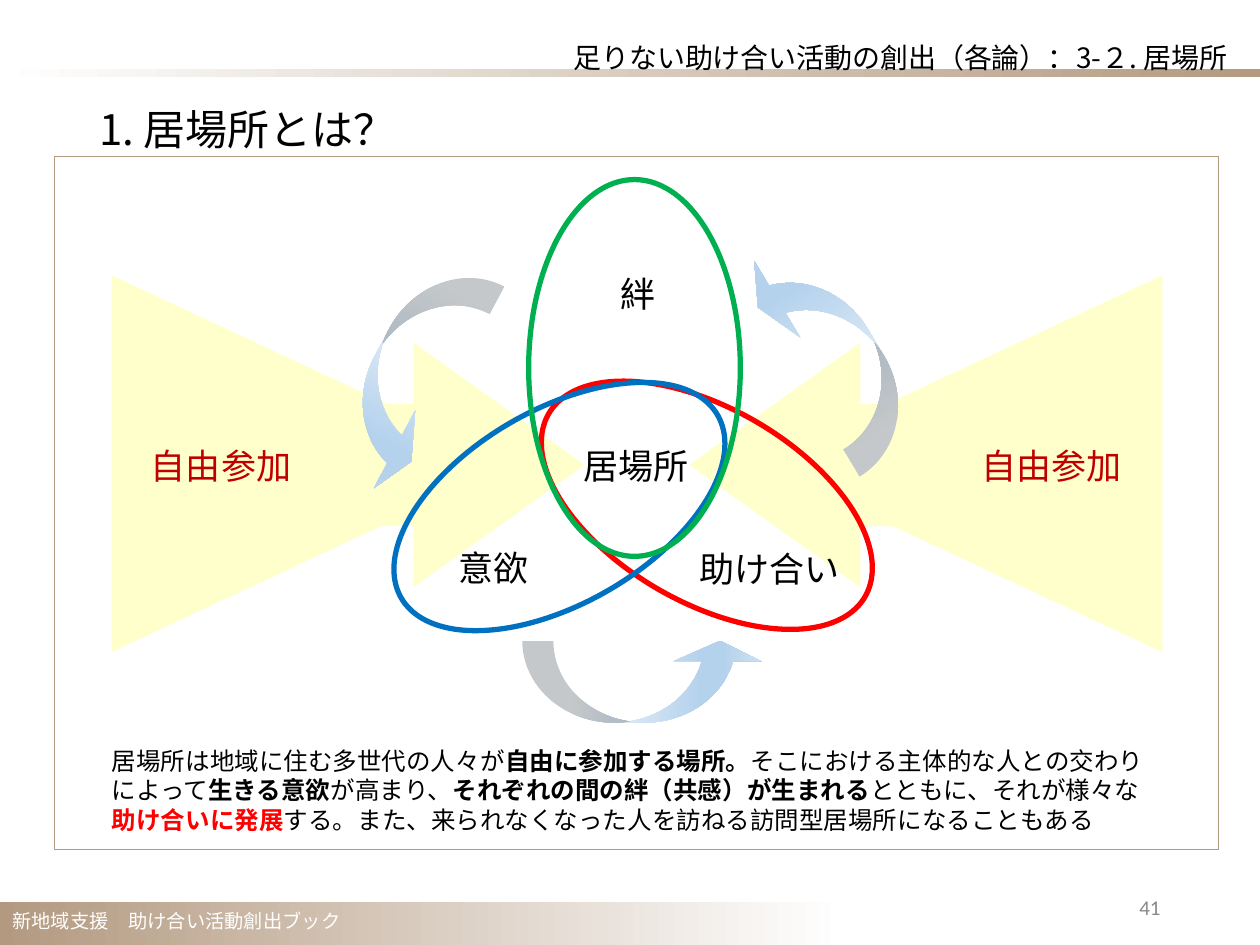
from typing import NamedTuple
from lxml.etree import SubElement
from pptx import Presentation
from pptx.dml.color import RGBColor
from pptx.enum.shapes import MSO_SHAPE as Kind
from pptx.enum.text import MSO_ANCHOR as Anchor, MSO_AUTO_SIZE as Auto, PP_ALIGN as Align
from pptx.oxml.ns import qn
from pptx.util import Inches, Pt

COLS, ROWS = 100, 75
WIDE, HIGH = Inches(10), Inches(7.5)
AXIS = 50.55  # column about which the two sides mirror
SANS = "Noto Sans CJK JP"
BLACK, WHITE, RED, DARK = "000000", "FFFFFF", "FF0000", "C00000"
TAN, CREAM, GREY = "B39980", "FFFFCC", "898989"


class Box(NamedTuple):
    col: float
    row: float
    cols: float
    rows: float

    def mirror(self):
        return self._replace(col=2 * AXIS - self.col - self.cols)

    def emu(self):
        return [round(n) for n in (self.col * WIDE / COLS, self.row * HIGH / ROWS,
                                   self.cols * WIDE / COLS, self.rows * HIGH / ROWS)]


class Ring(NamedTuple):
    box: Box
    turn: float
    hue: str


class Label(NamedTuple):
    text: str
    box: Box
    hue: str = BLACK


class Swirl(NamedTuple):
    box: Box
    turn: float


def tint(hue: str) -> RGBColor:
    return RGBColor.from_string(hue)


def blend(shape, stops, angle: int) -> None:
    """Fill with a gradient of (percent, hue) stops."""
    shape.fill.background()
    prop = shape.element.spPr
    old = prop.find(qn("a:noFill"))
    grad = SubElement(prop, qn("a:gradFill"), rotWithShape="1")
    prop.replace(old, grad)
    items = SubElement(grad, qn("a:gsLst"))
    for share, hue in stops:
        stop = SubElement(items, qn("a:gs"), pos=str(share * 1000))
        SubElement(stop, qn("a:srgbClr"), val=hue)
    SubElement(grad, qn("a:lin"), ang=str(angle * 60000), scaled="0")


def draw(slide, kind, box: Box, fill=None, line=None, weight=1.0, turn=0.0,
         adjust=(), stops=None, angle=0):
    shape = slide.shapes.add_shape(kind, *box.emu())
    shape.shadow.inherit = False
    shape.rotation = turn
    for spot, value in enumerate(adjust):
        shape.adjustments[spot] = value
    if stops:
        blend(shape, stops, angle)
    elif fill:
        shape.fill.solid()
        shape.fill.fore_color.rgb = tint(fill)
    else:
        shape.fill.background()
    if line:
        shape.line.color.rgb = tint(line)
        shape.line.width = Pt(weight)
    else:
        shape.line.fill.background()
    return shape


def write(slide, box: Box, text, size=20, hue=BLACK, font=SANS, align=Align.LEFT,
          anchor=Anchor.TOP, wrap=True, fit=Auto.SHAPE_TO_FIT_TEXT, space=None, holder=None):
    """Write a string, or a list of (text, bold, hue) runs."""
    if holder is None:
        shape = slide.shapes.add_textbox(*box.emu())
    else:
        shape = holder
        shape.left, shape.top, shape.width, shape.height = box.emu()
        shape.element.getparent().append(shape.element)  # bring to front
    frame = shape.text_frame
    frame.word_wrap, frame.auto_size, frame.vertical_anchor = wrap, fit, anchor
    para = frame.paragraphs[0]
    if holder is not None:
        prop = para._p.get_or_add_pPr()
        prop.set("marL", "0")
        prop.set("indent", "0")
        SubElement(prop, qn("a:buNone"))
        para.space_before = Pt(0)
    para.alignment = align
    if space:
        para.line_spacing = space
    for words, bold, shade in [(text, False, hue)] if isinstance(text, str) else text:
        run = para.add_run()
        run.text = words
        run.font.size, run.font.bold, run.font.name = Pt(size), bold, font
        run.font.color.rgb = tint(shade)
        SubElement(run._r.get_or_add_rPr(), qn("a:ea"), typeface=font)


RINGS = [
    Ring(Box(41.6, 32.4, 29, 15.4), 30, RED),
    Ring(Box(29.9, 32.5, 29, 15.4), 330, "0070C0"),
    Ring(Box(35.4, 20.8, 29.9, 16.8), 90, "00B050"),
]
JOIN = Box(75.6, 34.8, 15.7, 4.4)
LABELS = [
    Label("絆", Box(43.9, 21.1, 13.5, 4.4)),
    Label("助け合い", Box(51.7, 43, 18.8, 4.4)),
    Label("居場所", Box(42.2, 34.8, 16.6, 4.4)),
    Label("意欲", Box(32.4, 42.9, 13.5, 4.4)),
    Label("自由参加", JOIN, DARK),
    Label("自由参加", Box(9.7, 34.8, 15.7, 4.4), DARK),
]
SWIRLS = [
    Swirl(Box(62.8, 18.3, 6.6, 19.2), 149),
    Swirl(Box(29.4, 20.1, 6.5, 19.2), 28),
    Swirl(Box(47.8, 44.5, 6.5, 19.2), 270),
]
SHEEN = [(19, "F7FAFD"), (74, "B5D2EC"), (83, "B5D2EC"), (100, "CEE1F2")]
STORY = [
    ("居場所は地域に住む多世代の人々が", False, BLACK),
    ("自由に参加する場所。", True, BLACK),
    ("そこにおける主体的な人との交わりによって", False, BLACK),
    ("生きる意欲", True, BLACK),
    ("が高まり、", False, BLACK),
    ("それぞれの間の絆（共感）が生まれる", True, BLACK),
    ("とともに、それが様々な", False, BLACK),
    ("助け合いに発展", True, RED),
    ("する。また、来られなくなった人を訪ねる訪問型居場所になることもある", False, BLACK),
]


def main() -> None:
    deck = Presentation()
    deck.slide_width, deck.slide_height = WIDE, HIGH
    slide = deck.slides.add_slide(deck.slide_layouts[1])
    title, body = slide.placeholders

    # Header and footer bands
    draw(slide, Kind.RECTANGLE, Box(0, 71.6, 100, 3.4), stops=[(0, TAN), (67, WHITE)])
    draw(slide, Kind.RECTANGLE, Box(0, 5.5, 100, 0.6), angle=180,
         stops=[(0, TAN), (33, "CCBBAA"), (100, WHITE)])
    write(slide, Box(0, 71.7, 28.2, 2.9), "新地域支援　助け合い活動創出ブック",
          size=11, hue=WHITE, wrap=False)

    # Wedges and arrows pointing inward from both sides
    arrow, wedge = Box(54.7, 27.2, 37, 19.4), Box(61.3, 20.8, 29.9, 32)
    for kind, tip, base, turn in ((Kind.LEFT_ARROW, arrow, wedge, 270),
                                  (Kind.RIGHT_ARROW, arrow.mirror(), wedge.mirror(), 90)):
        draw(slide, kind, tip, fill=CREAM, adjust=(0.5, 0.7))
        draw(slide, Kind.ISOSCELES_TRIANGLE, base, fill=CREAM, turn=turn)

    # Heading, page number and story
    write(slide, Box(6.9, 8.2, 90, 5.9), "1. 居場所とは？", size=24, fit=Auto.NONE,
          space=0.9, holder=body)
    write(slide, Box(70.6, 69.5, 22.5, 4), "41", size=12, hue=GREY, font="Calibri",
          align=Align.RIGHT, anchor=Anchor.BOTTOM, fit=Auto.NONE)
    write(slide, Box(7.9, 58.7, 85.4, 8.1), STORY, size=14)

    # Overlapping rings with their labels
    for ring in RINGS:
        draw(slide, Kind.OVAL, ring.box, line=ring.hue, weight=3, turn=ring.turn)
    for label in LABELS:
        write(slide, label.box, label.text, hue=label.hue, align=Align.CENTER)

    # Title over the header band
    write(slide, Box(5.3, 1.5, 93.1, 6.4), "足りない助け合い活動の創出（各論）：3-２. 居場所",
          size=16, align=Align.RIGHT, anchor=Anchor.MIDDLE, fit=Auto.NONE,
          space=0.9, holder=title)

    # Curved arrows around the rings, then the frame
    for swirl in SWIRLS:
        draw(slide, Kind.CURVED_RIGHT_ARROW, swirl.box, turn=swirl.turn,
             adjust=(0.38, 1.07, 0.25), stops=SHEEN, angle=90)
    draw(slide, Kind.RECTANGLE, Box(4.3, 12.4, 92.4, 55), line=TAN, weight=0.25)
    deck.save("out.pptx")


if __name__ == "__main__":
    main()
